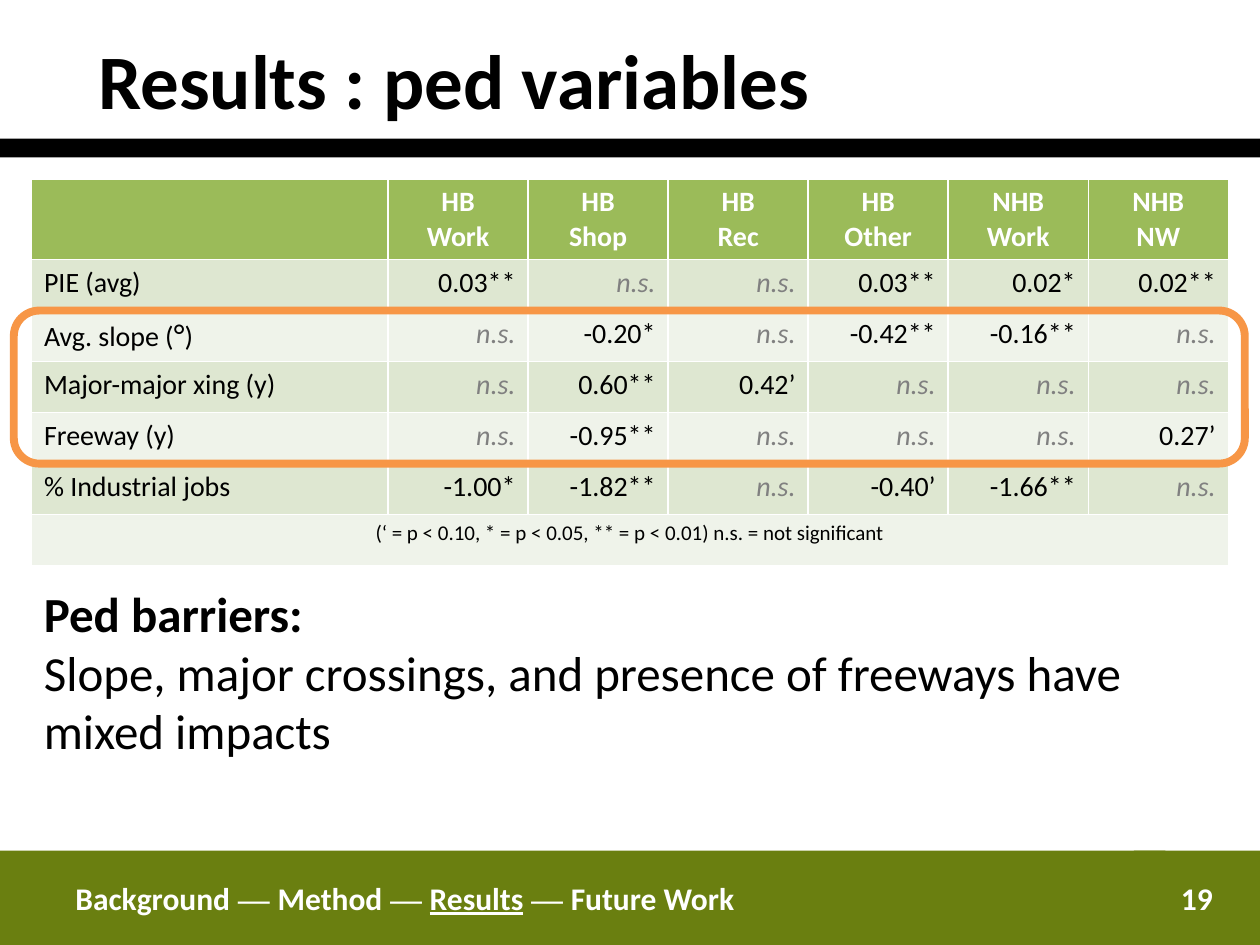
from dataclasses import dataclass
from typing import Optional

import pptx
import pptx.dml.color
import pptx.enum.shapes
import pptx.enum.text
import pptx.util

RGB = pptx.dml.color.RGBColor
ALIGN = pptx.enum.text.PP_ALIGN
MIDDLE = pptx.enum.text.MSO_ANCHOR.MIDDLE
SHAPE = pptx.enum.shapes.MSO_SHAPE

BLACK = RGB(0x00, 0x00, 0x00)
WHITE = RGB(0xFF, 0xFF, 0xFF)
GREY = RGB(0x80, 0x80, 0x80)
OLIVE = RGB(0x6A, 0x7F, 0x10)
HEADER_GREEN = RGB(0x9B, 0xBB, 0x59)
BANDS = RGB(0xDE, 0xE7, 0xD1), RGB(0xEF, 0xF3, 0xEA)
ORANGE = RGB(0xF7, 0x96, 0x46)

SLIDE_W, SLIDE_H = 10, 7.5
BODY_FONT, DASH_FONT = "Calibri", "Times New Roman"

# Table grid, in inches
TABLE_LEFT, TABLE_TOP, TABLE_W, TABLE_H = 0.25, 1.42, 9.5, 3.07
LABEL_W, HEADER_H = 2.83, 0.64

NS = "n.s."
PURPOSES = ["HB\nWork", "HB\nShop", "HB\nRec", "HB\nOther", "NHB Work", "NHB\nNW"]
ESTIMATES = [
    ("PIE (avg)", "0.03**", NS, NS, "0.03**", "0.02*", "0.02**"),
    ("Avg. slope (°)", NS, "-0.20*", NS, "-0.42**", "-0.16**", NS),
    ("Major-major xing (y)", NS, "0.60**", "0.42’", NS, NS, NS),
    ("Freeway (y)", NS, "-0.95**", NS, NS, NS, "0.27’"),
    ("% Industrial jobs", "-1.00*", "-1.82**", NS, "-0.40’", "-1.66**", NS),
]
LEGEND = "(‘ = p < 0.10, * = p < 0.05, ** = p < 0.01) n.s. = not significant"
SECTIONS = ["Background", "Method", "Results", "Future Work"]
CURRENT_SECTION = "Results"


@dataclass
class Box:
    left: float
    top: float
    width: float
    height: float

    def emu(self) -> list[int]:
        return [pptx.util.Inches(v) for v in (self.left, self.top, self.width, self.height)]


@dataclass
class Style:
    size: float
    color: RGB = BLACK
    bold: bool = False
    italic: bool = False
    align: ALIGN = ALIGN.LEFT


def apply_style(paragraph, style: Style) -> None:
    paragraph.alignment = style.align
    font = paragraph.font
    font.name, font.size = BODY_FONT, pptx.util.Pt(style.size)
    font.bold, font.italic = style.bold, style.italic
    font.color.rgb = style.color


def write(frame, text: str, style: Style) -> None:
    frame.text = text
    for paragraph in frame.paragraphs:
        apply_style(paragraph, style)


def add_bar(slide, box: Box, fill: Optional[RGB], kind: SHAPE = SHAPE.RECTANGLE):
    bar = slide.shapes.add_shape(kind, *box.emu())
    bar.shadow.inherit = False
    bar.line.fill.background()
    if fill is None:
        bar.fill.background()
    else:
        bar.fill.solid()
        bar.fill.fore_color.rgb = fill
    bar.text_frame.vertical_anchor = MIDDLE
    return bar


def add_text(slide, box: Box):
    frame = slide.shapes.add_textbox(*box.emu()).text_frame
    frame.word_wrap = True
    return frame


def fill_cell(cell, text: str, fill: RGB, style: Style) -> None:
    cell.fill.solid()
    cell.fill.fore_color.rgb = fill
    write(cell.text_frame, text, style)


def add_estimates(slide, row_height: float) -> None:
    rows, cols = len(ESTIMATES) + 2, len(PURPOSES) + 1
    frame = Box(TABLE_LEFT, TABLE_TOP, TABLE_W, TABLE_H)
    table = slide.shapes.add_table(rows, cols, *frame.emu()).table
    for c, column in enumerate(table.columns):
        width = (TABLE_W - LABEL_W) / len(PURPOSES) if c else LABEL_W
        column.width = pptx.util.Inches(width)
    for r, row in enumerate(table.rows):
        row.height = pptx.util.Inches(row_height if r else HEADER_H)

    for c, purpose in enumerate(["", *PURPOSES]):
        fill_cell(table.cell(0, c), purpose, HEADER_GREEN,
                  Style(16, WHITE, bold=True, align=ALIGN.CENTER))
    for r, values in enumerate(ESTIMATES, start=1):
        for c, value in enumerate(values):
            style = Style(16, GREY if value == NS else BLACK, italic=value == NS,
                          align=ALIGN.RIGHT if c else ALIGN.LEFT)
            fill_cell(table.cell(r, c), value, BANDS[(r - 1) % 2], style)

    # The degree sign is larger than its label
    slope = table.cell(2, 0).text_frame.paragraphs[0]
    before, after = ESTIMATES[1][0].split("°")
    slope.runs[0].text = before
    degree = slope.add_run()
    degree.text, degree.font.size = "°", pptx.util.Pt(18)
    slope.add_run().text = after

    # Legend across the full width
    legend = table.cell(rows - 1, 0)
    legend.merge(table.cell(rows - 1, cols - 1))
    fill_cell(legend, LEGEND, BANDS[1], Style(12, align=ALIGN.CENTER))


def add_footer(slide, number: str) -> None:
    top, height = 0.9 * SLIDE_H, 0.1 * SLIDE_H
    add_bar(slide, Box(0, top, 0.05 * SLIDE_W, height), OLIVE)
    page = add_bar(slide, Box(0.9 * SLIDE_W, top, 0.1 * SLIDE_W, height), OLIVE)
    write(page.text_frame, number, Style(18, WHITE, bold=True, align=ALIGN.CENTER))

    trail = add_bar(slide, Box(0.05 * SLIDE_W, top, 0.875 * SLIDE_W, height), OLIVE)
    paragraph = trail.text_frame.paragraphs[0]
    apply_style(paragraph, Style(18, WHITE, bold=True))
    for i, section in enumerate(SECTIONS):
        if i:
            dash = paragraph.add_run()
            dash.text, dash.font.name = " — ", DASH_FONT
        name = paragraph.add_run()
        name.text = section
        if section == CURRENT_SECTION:
            name.font.underline = True


def main() -> None:
    deck = pptx.Presentation()
    deck.slide_width = pptx.util.Inches(SLIDE_W)
    deck.slide_height = pptx.util.Inches(SLIDE_H)
    slide = deck.slides.add_slide(deck.slide_layouts[6])

    # Title and the rule below it
    add_bar(slide, Box(0, 1.1, SLIDE_W, 0.02 * SLIDE_H), BLACK)
    title = add_text(slide, Box(0, 0, 7.08, 1.25))
    title.vertical_anchor = MIDDLE
    title.margin_left = pptx.util.Inches(0.78)
    write(title, "Results : ped variables", Style(44, bold=True))

    add_footer(slide, "19")

    # Table, with the three barrier rows ringed
    row_height = (TABLE_H - HEADER_H) / (len(ESTIMATES) + 1)
    add_estimates(slide, row_height)
    ring_top = TABLE_TOP + HEADER_H + row_height
    ring = add_bar(slide, Box(0.11, ring_top, 9.77, 3 * row_height), None,
                   SHAPE.ROUNDED_RECTANGLE)
    ring.line.color.rgb = ORANGE
    ring.line.width = pptx.util.Pt(4.5)

    # Takeaway
    takeaway = add_text(slide, Box(TABLE_LEFT, 4.58, 9.42, 1.51))
    write(takeaway, "Ped barriers:\nSlope, major crossings, and presence of "
          "freeways have mixed impacts", Style(28))
    takeaway.paragraphs[0].font.bold = True

    deck.save("out.pptx")


if __name__ == "__main__":
    main()
